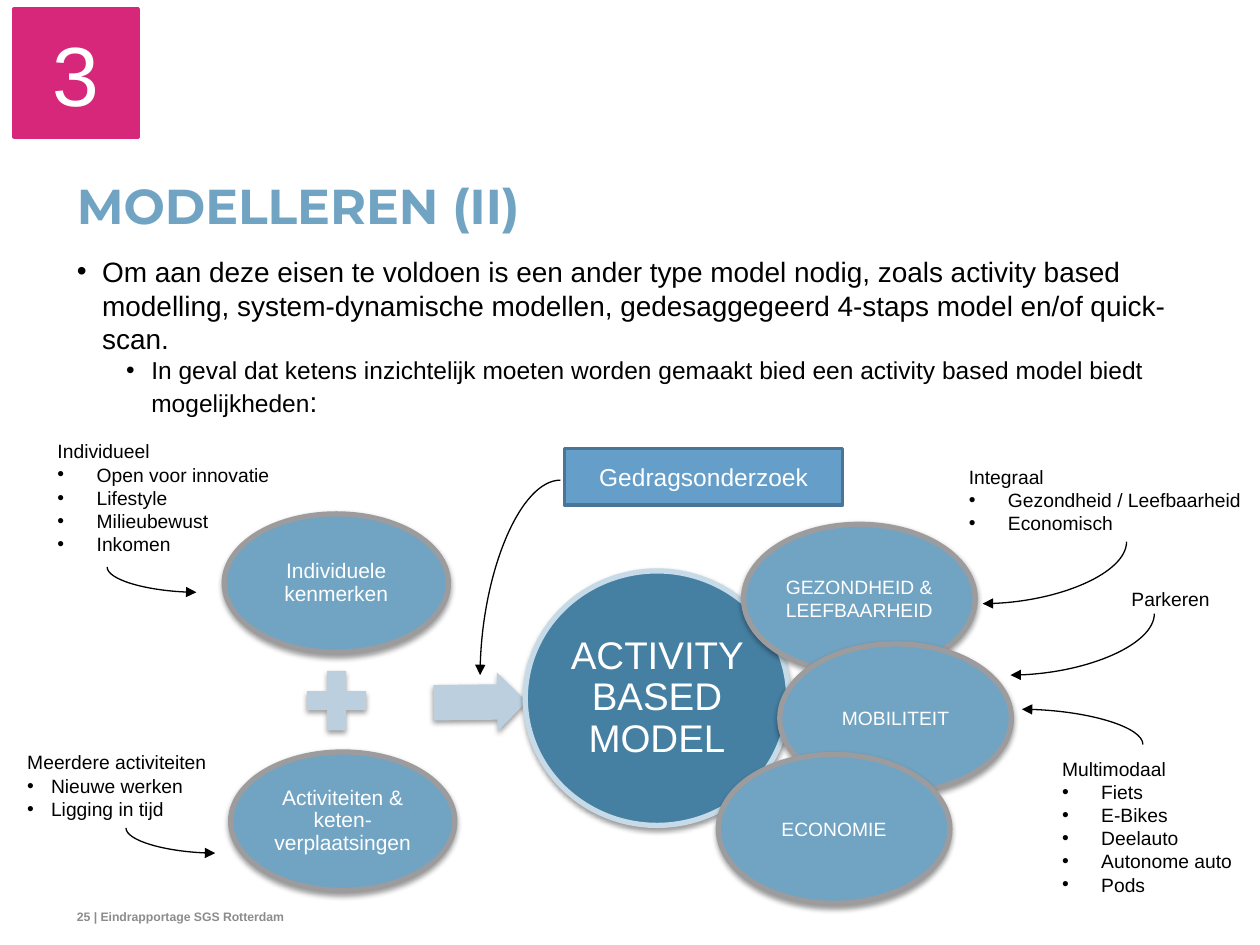
from lxml.etree import SubElement
from pptx import Presentation
from pptx.dml.color import RGBColor
from pptx.enum.shapes import MSO_CONNECTOR, MSO_SHAPE
from pptx.enum.text import MSO_ANCHOR, MSO_AUTO_SIZE, PP_ALIGN
from pptx.oxml.ns import qn
from pptx.util import Cm, Pt

COLOURS = {
    "blue": "71A4C3", "deep": "457FA2", "pale": "BBCFDE", "rim": "C6DBE7",
    "grey": "9C9C9E", "box": "649EC9", "edge": "4A7595", "pink": "D6277A",
    "footer": "8C8C8C", "white": "FFFFFF", "black": "000000",
}


def colour(name):
    """Return the named colour."""
    return RGBColor.from_string(COLOURS[name])


def format_runs(paragraph, size, name, bold=False, font="Arial"):
    """Apply one font to every run of a paragraph."""
    for run in paragraph.runs:
        run.font.name, run.font.size, run.font.bold = font, Pt(size), bold
        run.font.color.rgb = colour(name)


def set_margins(text_frame, margin):
    """Give all four insets the same width in centimetres."""
    text_frame.margin_left = text_frame.margin_right = Cm(margin)
    text_frame.margin_top = text_frame.margin_bottom = Cm(margin)


def set_bullet(paragraph, left, hanging):
    """Give a paragraph a round bullet with a hanging indent."""
    properties = paragraph._p.get_or_add_pPr()
    properties.set("marL", str(Cm(left)))
    properties.set("indent", str(-Cm(hanging)))
    SubElement(properties, qn("a:buFont"), typeface="Arial")
    SubElement(properties, qn("a:buChar"), char="•")


def place(shape, left, top, width, height):
    """Move and resize a shape, in centimetres."""
    shape.left, shape.top = Cm(left), Cm(top)
    shape.width, shape.height = Cm(width), Cm(height)


def fill_title(title):
    """Write the slide title."""
    place(title, 1.55, 3.73, 22.38, 2.01)
    text_frame = title.text_frame
    text_frame.text = "MODELLEREN (II)"
    text_frame.vertical_anchor = MSO_ANCHOR.TOP
    text_frame.auto_size = MSO_AUTO_SIZE.NONE
    set_margins(text_frame, 0)
    paragraph = text_frame.paragraphs[0]
    paragraph.alignment = PP_ALIGN.LEFT
    paragraph.line_spacing = Pt(28)
    format_runs(paragraph, 28, "blue", True, "Montserrat")


def fill_body(body):
    """Write the two-level list."""
    place(body, 1.55, 5.13, 22.38, 11.61)
    text_frame = body.text_frame
    text_frame.auto_size = MSO_AUTO_SIZE.NONE
    set_margins(text_frame, 0)
    main_point = text_frame.paragraphs[0]
    main_point.text = (
        "Om aan deze eisen te voldoen is een ander type model nodig, zoals activity based "
        "modelling, system-dynamische modellen, gedesaggegeerd 4-staps model en/of quick-scan.")
    sub_point = text_frame.add_paragraph()
    sub_point.text = ("In geval dat ketens inzichtelijk moeten worden gemaakt bied een "
                      "activity based model biedt mogelijkheden")
    sub_point.level = 1
    for paragraph, left, size in ((main_point, 0.51, 16), (sub_point, 1.5, 14)):
        set_bullet(paragraph, left, 0.51)
        paragraph.space_before = Pt(0)
        format_runs(paragraph, size, "black")
    colon = sub_point.add_run()
    colon.text = ":"
    colon.font.name, colon.font.size = "Arial", Pt(16)
    colon.font.color.rgb = colour("black")


def add_figure(slide, kind, box, fill, line=None, line_width=3, shadow=True):
    """Add a filled preset shape, optionally outlined and shadowed."""
    shape = slide.shapes.add_shape(kind, *(Cm(value) for value in box))
    shape.fill.solid()
    shape.fill.fore_color.rgb = colour(fill)
    if line:
        shape.line.color.rgb = colour(line)
        shape.line.width = Pt(line_width)
    else:
        shape.line.fill.background()
    shape.shadow.inherit = False
    if shadow:
        effects = shape._element.spPr.find(qn("a:effectLst"))
        outer = SubElement(effects, qn("a:outerShdw"), blurRad=str(Pt(3.1)),
                           dist=str(Pt(1.6)), dir="5400000", rotWithShape="0")
        black = SubElement(outer, qn("a:srgbClr"), val=COLOURS["black"])
        SubElement(black, qn("a:alpha"), val="38000")
    return shape


def add_label(shape, text, size, spacing=1.0, margin=0.05):
    """Centre white text in a shape."""
    text_frame = shape.text_frame
    text_frame.text = text
    text_frame.word_wrap = True
    text_frame.vertical_anchor = MSO_ANCHOR.MIDDLE
    set_margins(text_frame, margin)
    for paragraph in text_frame.paragraphs:
        paragraph.alignment = PP_ALIGN.CENTER
        paragraph.line_spacing = spacing
        format_runs(paragraph, size, "white")


def add_callout(slide, box, heading, items=(), indent=0.79):
    """Add a heading with bulleted items below it."""
    text_box = slide.shapes.add_textbox(*(Cm(value) for value in box))
    text_frame = text_box.text_frame
    text_frame.text = "\n".join((heading, *items))
    text_frame.word_wrap = True
    text_frame.auto_size = MSO_AUTO_SIZE.SHAPE_TO_FIT_TEXT
    for paragraph in text_frame.paragraphs[1:]:
        set_bullet(paragraph, indent, indent)
    for paragraph in text_frame.paragraphs:
        format_runs(paragraph, 11, "black")


def add_footer(slide):
    """Add the page number and report name."""
    text_box = slide.shapes.add_textbox(Cm(1.55), Cm(18.14), Cm(11.99), Cm(0.48))
    text_frame = text_box.text_frame
    text_frame.text = "25 | Eindrapportage SGS Rotterdam"
    text_frame.word_wrap = False
    text_frame.vertical_anchor = MSO_ANCHOR.BOTTOM
    set_margins(text_frame, 0)
    format_runs(text_frame.paragraphs[0], 7, "footer", True)


def add_curve(slide, start, end, vertical_start=True):
    """Add a quarter-curve arrow that leaves its start vertically or horizontally."""
    (left, top), (right, bottom) = start, end
    if vertical_start:
        middle_x, middle_y = (left + right) / 2, (top + bottom) / 2
        half_width, half_height = abs(bottom - top) / 2, abs(right - left) / 2
        down = bottom > top
        if down == (right > left):
            half_height = -half_height
        left, right = middle_x - half_width, middle_x + half_width
        top, bottom = middle_y - half_height, middle_y + half_height
    connector = slide.shapes.add_connector(
        MSO_CONNECTOR.CURVE, Cm(left), Cm(top), Cm(right), Cm(bottom))
    connector.line.color.rgb = colour("black")
    connector.line.width = Pt(0.75)
    properties = connector._element.spPr
    properties.find(qn("a:prstGeom")).set("prst", "curvedConnector2")
    if vertical_start:
        properties.find(qn("a:xfrm")).set("rot", str((90 if down else 270) * 60000))
    SubElement(properties.find(qn("a:ln")), qn("a:tailEnd"), type="triangle")
    SubElement(properties, qn("a:effectLst"))


def main():
    """Build the slide and save it."""
    presentation = Presentation()
    presentation.slide_width, presentation.slide_height = Cm(25.4), Cm(19.05)
    slide = presentation.slides.add_slide(presentation.slide_layouts[1])
    fill_title(slide.shapes.title)
    fill_body(slide.placeholders[1])
    add_footer(slide)

    for left, top, text in ((4.52, 10.36, "Individuele kenmerken"),
                            (4.65, 15.16, "Activiteiten & keten- verplaatsingen")):
        source = add_figure(slide, MSO_SHAPE.OVAL, (left, top, 4.52, 2.79), "blue", "grey")
        add_label(source, text, 12, 0.9)
    add_figure(slide, MSO_SHAPE.MATH_PLUS, (5.97, 13.31, 1.63, 1.63), "pale")
    arrow = add_figure(slide, MSO_SHAPE.RIGHT_ARROW, (8.74, 13.56, 1.88, 1.19), "pale")
    arrow.adjustments[0] = 0.6
    arrow.rotation = 359.3
    model = add_figure(slide, MSO_SHAPE.OVAL, (10.59, 11.51, 5.31, 5.13), "deep", "rim")
    add_label(model, "ACTIVITY BASED MODEL", 22, 0.9, 0.08)
    for left, top, text in ((14.99, 10.57, "GEZONDHEID &\nLEEFBAARHEID"),
                            (15.72, 12.98, "MOBILITEIT"), (14.48, 15.21, "ECONOMIE")):
        outcome = add_figure(slide, MSO_SHAPE.OVAL, (left, top, 4.67, 3), "blue", "grey")
        add_label(outcome, text, 11)
    for box, fill, line, text, size in (
            ((11.38, 9.04, 5.61, 1.14), "box", "edge", "Gedragsonderzoek", 14),
            ((0.28, 0.18, 2.51, 2.59), "pink", "pink", "3", 48)):
        add_label(add_figure(slide, MSO_SHAPE.RECTANGLE, box, fill, line, 2, False), text, size)

    add_callout(slide, (0.3, 15.01, 4.19, 1.68), "Meerdere activiteiten",
                ("Nieuwe werken", "Ligging in tijd"), 0.48)
    add_callout(slide, (0.91, 8.74, 6.02, 2.62), "Individueel",
                ("Open voor innovatie", "Lifestyle", "Milieubewust", "Inkomen"))
    add_callout(slide, (19.28, 9.25, 6.86, 1.68), "Integraal",
                ("Gezondheid / Leefbaarheid", "Economisch"))
    add_callout(slide, (22.56, 11.71, 5.77, 1.19), "Parkeren")
    add_callout(slide, (21.16, 15.14, 4.6, 3.07), "Multimodaal",
                ("Fiets", "E-Bikes", "Deelauto", "Autonome auto", "Pods"))

    add_curve(slide, (11.3, 9.68), (9.68, 13.61), vertical_start=False)
    for start, end in (((22.71, 10.92), (19.81, 12.17)), ((23.27, 12.37), (20.37, 13.61)),
                       ((2.54, 16.69), (4.34, 17.2)), ((23.04, 15.01), (20.6, 14.3)),
                       ((2.16, 11.43), (3.96, 11.94))):
        add_curve(slide, start, end)
    presentation.save("out.pptx")


if __name__ == "__main__":
    main()
